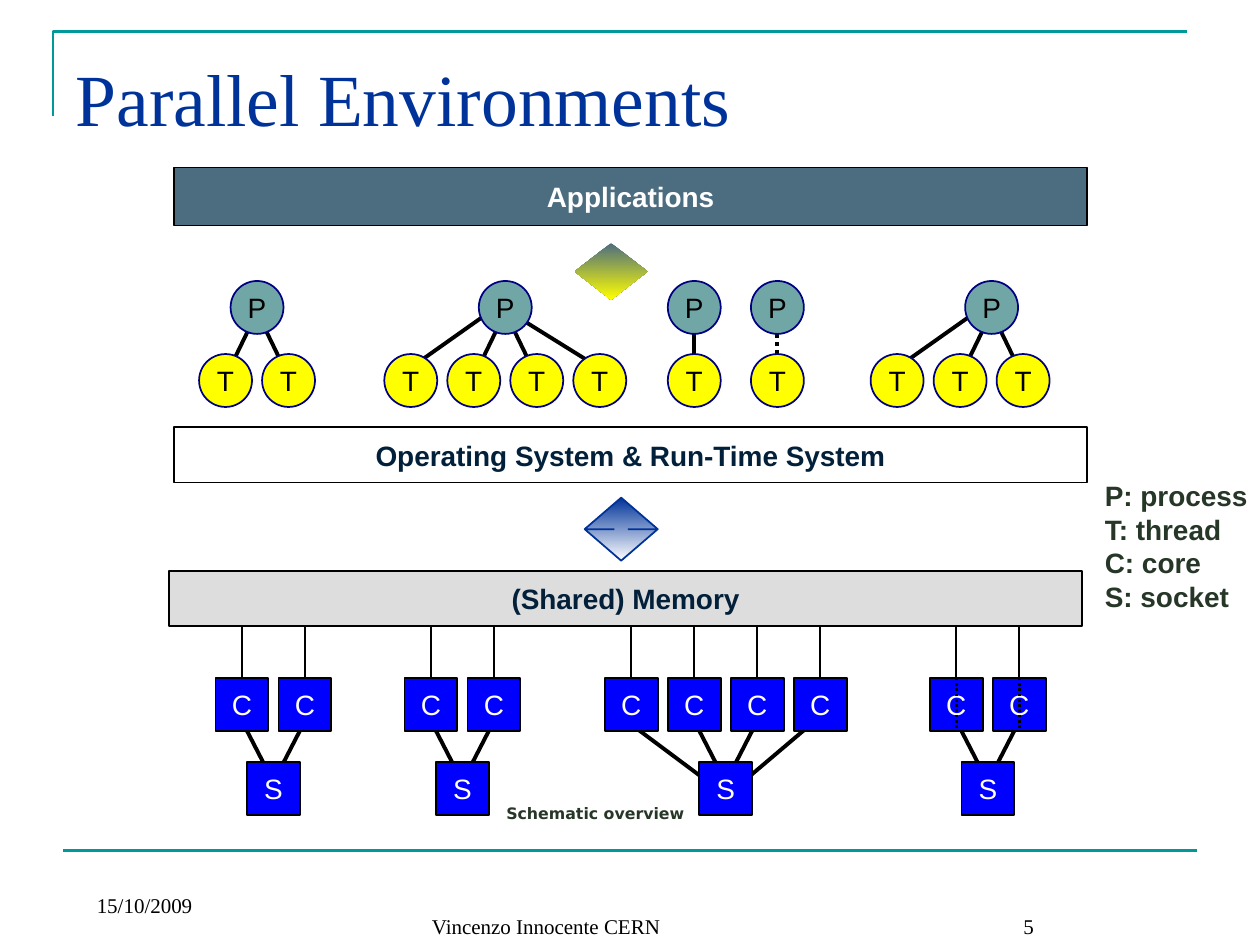
from lxml.etree import SubElement
from pptx import Presentation
from pptx.dml.color import RGBColor
from pptx.enum.dml import MSO_LINE
from pptx.enum.shapes import MSO_CONNECTOR, MSO_SHAPE as SHAPE
from pptx.enum.text import MSO_ANCHOR as ANCHOR, PP_ALIGN as ALIGN
from pptx.oxml.ns import qn
from pptx.util import Inches, Pt

COLORS = {
    "rule": "009999", "title": "003399", "black": "000000", "white": "FFFFFF",
    "process": "71A6A6", "thread": "FFFF00", "ring": "000082", "chip": "0000FF",
    "slate": "4C6D80", "memory": "DDDDDD", "navy": "02203A", "legend": "263627",
}
NODE = 0.42
PITCH = 0.5
THREAD_DROP = 0.58
SOCKET_DROP = 0.67
THREAD_SPOKES = {
    -1.5: (-0.13, 0.25, -0.71, 0.66), -0.5: (-0.04, 0.33, -0.2, 0.66),
    0: (0, 0.36, 0, 0.61),
    0.5: (0.04, 0.33, 0.2, 0.66), 1.5: (0.04, 0.25, 0.7, 0.66),
}
SOCKET_SPOKES = {
    -1.5: (-0.79, 0.34, -0.12, 0.84), -0.5: (-0.21, NODE, -0.04, 0.75),
    0.5: (0.21, NODE, 0.04, 0.75), 1.5: (0.71, 0.34, 0.12, 0.84),
}


def color(name):
    """Return the palette colour of this name."""
    return RGBColor.from_string(COLORS[name])


def write(frame, lines, size, ink, font="Arial", bold=False, align=ALIGN.LEFT):
    """Write one paragraph for each line."""
    for number, line in enumerate(lines):
        paragraph = frame.add_paragraph() if number else frame.paragraphs[0]
        paragraph.alignment = align
        run = paragraph.add_run()
        run.text = line
        run.font.name, run.font.size, run.font.bold = font, Pt(size), bold
        run.font.color.rgb = color(ink)


def add_label(slide, box, lines, size, ink, font="Arial", bold=False,
              align=ALIGN.LEFT, anchor=ANCHOR.TOP, wrap=False):
    """Place free text in a box."""
    frame = slide.shapes.add_textbox(*map(Inches, box)).text_frame
    frame.word_wrap, frame.vertical_anchor = wrap, anchor
    write(frame, lines, size, ink, font, bold, align)


def add_line(shapes, start, end, width=2.25, ink="black", dotted=False):
    """Draw a straight line between two points."""
    line = shapes.add_connector(MSO_CONNECTOR.STRAIGHT, *map(Inches, (*start, *end)))
    line.line.color.rgb, line.line.width = color(ink), Pt(width)
    if dotted:
        line.line.dash_style = MSO_LINE.ROUND_DOT
    SubElement(line._element.spPr, qn("a:effectLst"))
    return line


def add_block(shapes, kind, box, text, fill, outline, ink, bold=False):
    """Draw a filled shape with centred text."""
    block = shapes.add_shape(kind, *map(Inches, box))
    block.shadow.inherit = False
    block.fill.solid()
    block.fill.fore_color.rgb = color(fill)
    block.line.color.rgb, block.line.width = color(outline), Pt(1)
    frame = block.text_frame
    frame.word_wrap, frame.vertical_anchor = False, ANCHOR.MIDDLE
    write(frame, [text], 16, ink, bold=bold, align=ALIGN.CENTER)
    return block


def add_layer(slide, left, top, height, text, fill, ink):
    """Draw one full-width software or memory layer."""
    box = (left, top, 7.25, height)
    return add_block(slide.shapes, SHAPE.RECTANGLE, box, text, fill, "black", ink, True)


def add_exchange(slide, box, upper, lower, outline=None):
    """Draw a double arrow with a vertical gradient."""
    arrow = slide.shapes.add_shape(SHAPE.UP_DOWN_ARROW, *map(Inches, box))
    arrow.shadow.inherit = False
    arrow.adjustments[0], arrow.adjustments[1] = 0.5, 0.2
    arrow.fill.gradient()
    arrow.fill.gradient_angle = 270
    for stop, name in zip(arrow.fill.gradient_stops, (upper, lower)):
        stop.color.rgb = color(name)
    if outline:
        arrow.line.color.rgb, arrow.line.width = color(outline), Pt(1)
    else:
        arrow.line.fill.background()


def add_spokes(shapes, center, top, slots, spokes, dotted=False):
    """Draw the links between a parent and its children."""
    for slot in slots:
        x1, y1, x2, y2 = spokes[slot]
        add_line(shapes, (center + x1, top + y1), (center + x2, top + y2), dotted=dotted)


def add_process(slide, center, top, slots, dotted=False):
    """Draw a process above its threads."""
    shapes = slide.shapes.add_group_shape().shapes
    add_spokes(shapes, center, top, slots, THREAD_SPOKES, dotted)
    left = center - NODE / 2
    add_block(shapes, SHAPE.OVAL, (left, top, NODE, NODE), "P", "process", "ring", "black")
    for slot in slots:
        box = (left + slot * PITCH, top + THREAD_DROP, NODE, NODE)
        add_block(shapes, SHAPE.OVAL, box, "T", "thread", "ring", "black")


def add_socket(slide, center, top, slots, ticks=False):
    """Draw a socket below its cores and return the cores."""
    shapes = slide.shapes.add_group_shape().shapes
    add_spokes(shapes, center, top, slots, SOCKET_SPOKES)
    left = center - NODE / 2
    socket = (left, top + SOCKET_DROP, NODE, NODE)
    add_block(shapes, SHAPE.RECTANGLE, socket, "S", "chip", "black", "white")
    cores = [add_block(shapes, SHAPE.RECTANGLE, (left + slot * PITCH, top, NODE, NODE),
                       "C", "chip", "black", "white") for slot in slots]
    if ticks:
        for slot in slots:
            x = center + slot * PITCH
            add_line(shapes, (x, top), (x, top + NODE), 1.5, dotted=True)
    return cores


def add_memory(slide, left, top, cores):
    """Draw the memory layer and wire it to every core."""
    height = 0.44
    add_layer(slide, left, top, height, "(Shared) Memory", "memory", "navy")
    for core in cores:
        x = (core.left + core.width / 2) / Inches(1)
        wire = add_line(slide.shapes, (x, top + height), (x, core.top / Inches(1)), 1)
        wire.end_connect(core, 0)


def add_frame(slide, left, top, width):
    """Draw the corner rule above and the rule below the content."""
    corner = slide.shapes.build_freeform(Inches(left), Inches(top + 0.67))
    corner.add_line_segments([(Inches(left), Inches(top)),
                              (Inches(left + width), Inches(top))], close=False)
    rule = corner.convert_to_shape()
    rule.shadow.inherit = False
    rule.fill.background()
    rule.line.color.rgb, rule.line.width = color("rule"), Pt(1.5)
    add_line(slide.shapes, (0.5, 6.75), (0.5 + width, 6.75), 1.5, "rule")


def add_title(slide, box, text):
    """Fill and place the title placeholder."""
    title = slide.shapes.title
    title.left, title.top, title.width, title.height = map(Inches, box)
    frame = title.text_frame
    frame.vertical_anchor, frame.margin_top = ANCHOR.TOP, Inches(0.12)
    write(frame, [text], 42, "title", "Times New Roman")


def add_footer(slide):
    """Place the author, page number and date."""
    for box, text, align in (
        ((3.33, 7, 2.33, 0.5), "Vincenzo Innocente CERN", ALIGN.LEFT),
        ((6.58, 6.58, 3.17, 0.92), "5", ALIGN.CENTER),
        ((0.67, 6.83, 2.33, 0.5), "15/10/2009", ALIGN.LEFT),
    ):
        add_label(slide, box, [text], 12, "black", "Times New Roman",
                  align=align, anchor=ANCHOR.BOTTOM, wrap=True)


def main():
    """Build the slide and save it."""
    deck = Presentation()
    deck.slide_width, deck.slide_height = Inches(10), Inches(7.5)
    slide = deck.slides.add_slide(deck.slide_layouts[5])
    add_frame(slide, 0.42, 0.25, 9)
    add_title(slide, (0.5, 0.3, 9, 1.25), "Parallel Environments")
    add_footer(slide)

    pair, four = (-0.5, 0.5), (-1.5, -0.5, 0.5, 1.5)
    for center, slots, dotted in ((2.04, pair, False), (4.01, four, False),
                                  (7.87, four[:3], False), (5.51, (0,), False),
                                  (6.17, (0,), True)):
        add_process(slide, center, 2.23, slots, dotted)
    add_layer(slide, 1.38, 1.33, 0.46, "Applications", "slate", "white")
    add_layer(slide, 1.38, 3.39, 0.44, "Operating System & Run-Time System", "white", "navy")

    cores = []
    for center, slots, ticks in ((2.17, pair, False), (3.67, pair, False),
                                 (5.76, four, False), (7.84, pair, True)):
        cores += add_socket(slide, center, 5.38, slots, ticks)
    add_exchange(slide, (4.56, 1.93, 0.58, 0.45), "slate", "thread")
    add_exchange(slide, (4.64, 3.95, 0.58, 0.5), "title", "white", "title")
    add_label(slide, (8.67, 3.75, 1.35, 1.18),
              ["P: process", "T: thread", "C: core", "S: socket"], 16, "legend", bold=True)
    add_memory(slide, 1.34, 4.53, cores)
    add_label(slide, (3.92, 6.33, 1.62, 0.25), ["Schematic overview"], 9, "legend",
              "DejaVu Sans", bold=True)
    deck.save("out.pptx")


if __name__ == "__main__":
    main()
